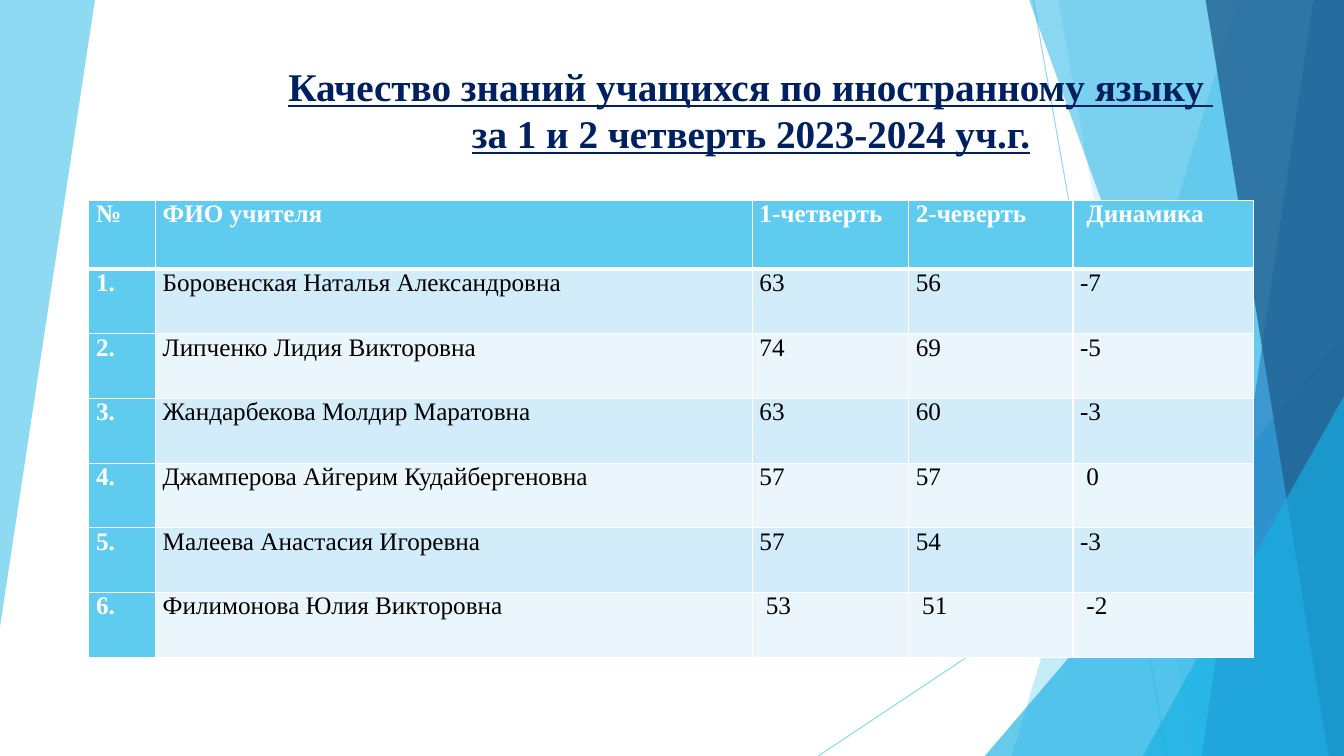
from lxml.etree import SubElement
from pptx import Presentation
from pptx.dml.color import RGBColor
from pptx.enum.shapes import MSO_CONNECTOR, MSO_SHAPE
from pptx.enum.text import MSO_AUTO_SIZE, PP_ALIGN
from pptx.oxml.ns import qn
from pptx.util import Cm, Pt

WHITE = RGBColor(0xFF, 0xFF, 0xFF)
BLACK = RGBColor(0x00, 0x00, 0x00)
NAVY = RGBColor(0x00, 0x20, 0x60)
SKY = RGBColor(0x5F, 0xCB, 0xEF)
CYAN = RGBColor(0x17, 0xB0, 0xE4)
BLUE = RGBColor(0x2E, 0x83, 0xC3)
STEEL = RGBColor(0x22, 0x62, 0x92)
ROW_TINTS = (RGBColor(0xD2, 0xEC, 0xF9), RGBColor(0xEA, 0xF6, 0xFC))

WIDTH, HEIGHT, BLEED = 33.87, 19.05, -0.02
CELL_INSET, CELL_INDENT = 0.18, 0.34

TITLE = ("Качество знаний учащихся по иностранному языку ",
         "за 1 и 2 четверть 2023-2024 уч.г.")
COLUMN_WIDTHS = (1.68, 15.04, 3.94, 4.14, 4.55)
HEADER_HEIGHT, ROW_HEIGHT = 1.73, 1.63
RESULTS = (
    ("№", "ФИО учителя", "1-четверть", "2-чеверть", "Динамика"),
    ("1.", "Боровенская Наталья Александровна", "63", "56", "-7"),
    ("2.", "Липченко Лидия Викторовна", "74", "69", "-5"),
    ("3.", "Жандарбекова Молдир Маратовна", "63", "60", "-3"),
    ("4.", "Джамперова Айгерим Кудайбергеновна", "57", "57", "0"),
    ("5.", "Малеева Анастасия Игоревна", "57", "54", "-3"),
    ("6.", "Филимонова Юлия Викторовна", "53", "51", "-2"),
)
INDENTED_CELLS = {(0, 4), (4, 4), (6, 2), (6, 3), (6, 4)}


class SlideBuilder:
    """Draws the facets, title and results table in one shared style."""

    FONT = "Times New Roman"
    FORMATS = {
        "title": {"size": Pt(28), "bold": True, "underline": True},
        "heading": {"size": Pt(18), "bold": True},
        "body": {"size": Pt(18), "bold": False},
    }

    def __init__(self, slide):
        self.slide = slide

    def set_alpha(self, properties, percent):
        color = next(properties.iter(qn("a:srgbClr")))
        SubElement(color, qn("a:alpha"), val=str(percent * 1000))

    def paint(self, facet, color, opacity):
        facet.shadow.inherit = False
        facet.fill.solid()
        facet.fill.fore_color.rgb = color
        facet.line.fill.background()
        self.set_alpha(facet._element.spPr, opacity)

    def polygon(self, corners, color, opacity):
        points = [(Cm(x), Cm(y)) for x, y in corners]
        outline = self.slide.shapes.build_freeform(*points[0], scale=1.0)
        outline.add_line_segments(points[1:], close=True)
        self.paint(outline.convert_to_shape(), color, opacity)

    def band(self, top_x, bottom_x, color, opacity):
        self.polygon(((top_x, BLEED), (WIDTH, BLEED), (WIDTH, HEIGHT), (bottom_x, HEIGHT)),
                     color, opacity)

    def corner_triangle(self, left, top):
        facet = self.slide.shapes.add_shape(
            MSO_SHAPE.ISOSCELES_TRIANGLE, Cm(left), Cm(top), Cm(WIDTH - left), Cm(HEIGHT - top))
        facet.adjustments[0] = 1
        self.paint(facet, CYAN, 66)

    def ray(self, *ends):
        ray = self.slide.shapes.add_connector(MSO_CONNECTOR.STRAIGHT, *map(Cm, ends))
        ray.line.color.rgb = SKY
        ray.line.width = Pt(0.75)
        self.set_alpha(ray._element.spPr, 70)
        SubElement(ray._element.spPr, qn("a:effectLst"))

    def styled_text(self, paragraph, text, style, color):
        words = paragraph.add_run()
        words.text = text
        words.font.name = self.FONT
        words.font.color.rgb = color
        for attribute, value in self.FORMATS[style].items():
            setattr(words.font, attribute, value)

    def title(self, lines, *box):
        frame = self.slide.shapes.add_textbox(*map(Cm, box)).text_frame
        frame.word_wrap = True
        frame.auto_size = MSO_AUTO_SIZE.SHAPE_TO_FIT_TEXT
        for index, line in enumerate(lines):
            paragraph = frame.add_paragraph() if index else frame.paragraphs[0]
            paragraph.alignment = PP_ALIGN.CENTER
            self.styled_text(paragraph, line, "title", NAVY)

    def borders(self, cell, row):
        widths = {"L": 1, "R": 1, "T": 3 if row == 1 else 1, "B": 3 if row == 0 else 1}
        properties = cell._tc.get_or_add_tcPr()
        for side, width in widths.items():
            edge = SubElement(properties, qn(f"a:ln{side}"), w=str(Pt(width)))
            fill = SubElement(edge, qn("a:solidFill"))
            SubElement(fill, qn("a:srgbClr"), val=str(WHITE))

    def cell(self, cell, text, row, column):
        is_heading = row == 0 or column == 0
        indent = CELL_INDENT if (row, column) in INDENTED_CELLS else CELL_INSET
        margins = {"margin_left": Cm(indent), "margin_right": Cm(CELL_INSET),
                   "margin_top": 0, "margin_bottom": 0}
        for attribute, value in margins.items():
            setattr(cell, attribute, value)
        self.borders(cell, row)
        cell.fill.solid()
        cell.fill.fore_color.rgb = SKY if is_heading else ROW_TINTS[(row - 1) % 2]
        self.styled_text(cell.text_frame.paragraphs[0], text,
                         "heading" if is_heading else "body", WHITE if is_heading else BLACK)

    def table(self, rows, left, top):
        heights = [HEADER_HEIGHT] + [ROW_HEIGHT] * (len(rows) - 1)
        table = self.slide.shapes.add_table(
            len(rows), len(COLUMN_WIDTHS), Cm(left), Cm(top),
            Cm(sum(COLUMN_WIDTHS)), Cm(sum(heights))).table
        table.first_col = True
        for column, width in zip(table.columns, COLUMN_WIDTHS):
            column.width = Cm(width)
        for row, (texts, height) in enumerate(zip(rows, heights)):
            table.rows[row].height = Cm(height)
            for column, text in enumerate(texts):
                self.cell(table.cell(row, column), text, row, column)


def main():
    presentation = Presentation()
    presentation.slide_width, presentation.slide_height = Cm(WIDTH), Cm(HEIGHT)
    builder = SlideBuilder(presentation.slides.add_slide(presentation.slide_layouts[6]))

    builder.polygon(((0, 0), (2.39, BLEED), (2.39, 0.02), (0, 15.8)), SKY, 70)
    builder.ray(26.04, 0, 29.41, HEIGHT)
    builder.ray(WIDTH, 10.24, 20.62, HEIGHT)
    builder.band(31.19, 25.5, SKY, 36)
    builder.band(26.67, 30.05, SKY, 20)
    builder.corner_triangle(24.82, 8.46)
    builder.band(25.93, 32.79, CYAN, 50)
    builder.band(33.1, 30.28, BLUE, 70)
    builder.band(30.38, 33.48, STEEL, 80)
    builder.corner_triangle(28.8, 9.98)

    builder.title(TITLE, 6.76, 1.45, 24.33, 2.64)
    builder.table(RESULTS, 2.24, 5.05)
    presentation.save("out.pptx")


if __name__ == "__main__":
    main()
